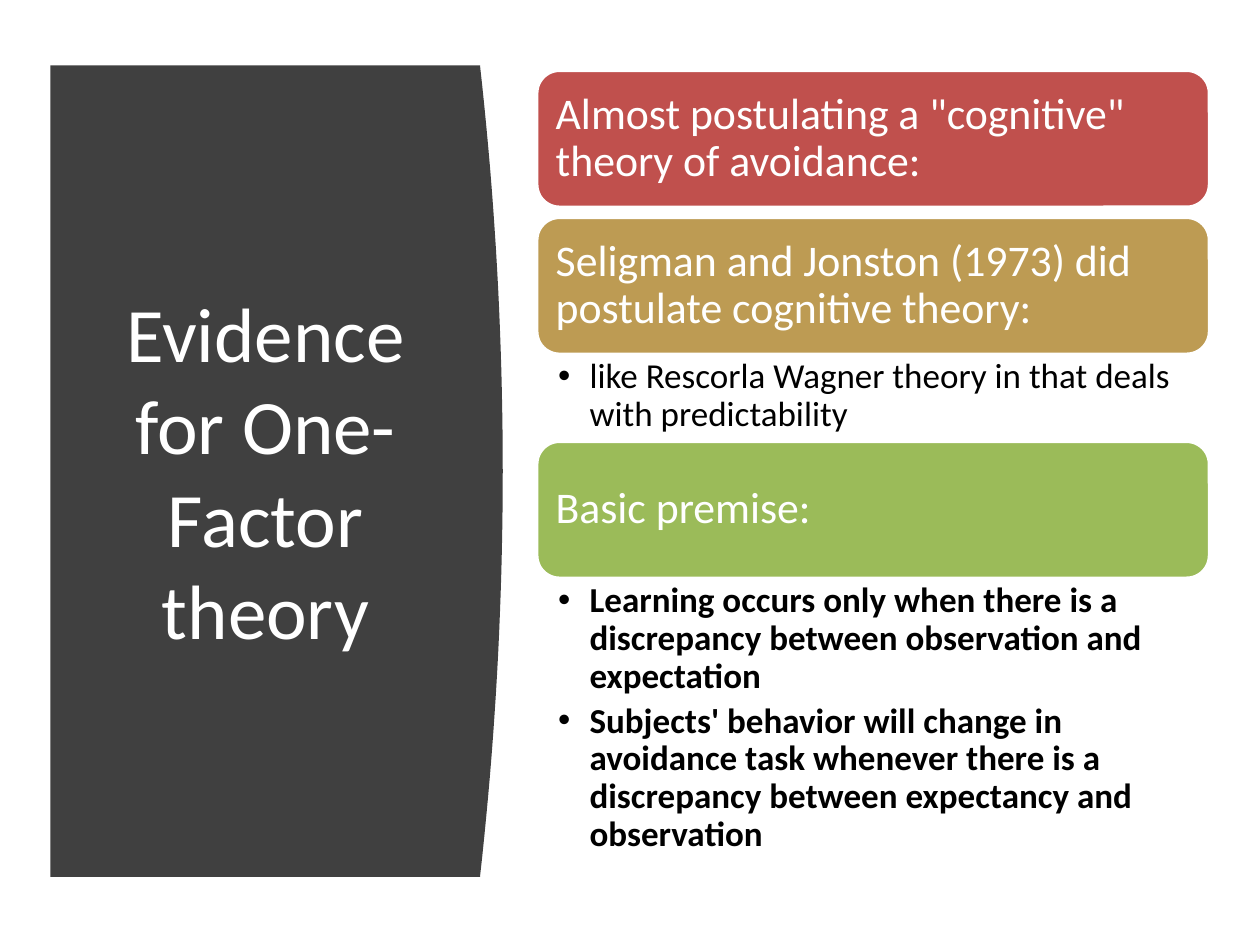
"""Builds the slide on evidence for one-factor theory."""
from pptx import Presentation
from pptx.dml.color import RGBColor
from pptx.enum.shapes import MSO_SHAPE
from pptx.enum.text import MSO_ANCHOR, MSO_AUTO_SIZE, PP_ALIGN
from pptx.util import Pt

WHITE = RGBColor(255, 255, 255)
BLACK = RGBColor(0, 0, 0)
DARK = RGBColor(0x40, 0x40, 0x40)
RED = RGBColor(0xC0, 0x50, 0x4D)
GOLD = RGBColor(0xBD, 0x9B, 0x53)
GREEN = RGBColor(0x9B, 0xBB, 0x59)


def write(frame, *lines, size, color=WHITE, bold=False, align=PP_ALIGN.LEFT,
          anchor=MSO_ANCHOR.MIDDLE, pads=(7.2, 7.2, 7.2, 7.2),
          pitch=0.9, after=0, hang=0):
    frame.word_wrap = True
    frame.auto_size = MSO_AUTO_SIZE.NONE
    frame.vertical_anchor = anchor
    (frame.margin_left, frame.margin_top,
     frame.margin_right, frame.margin_bottom) = map(Pt, pads)
    for i, line in enumerate(lines):
        par = frame.add_paragraph() if i else frame.paragraphs[0]
        par.alignment = align
        par.line_spacing = pitch
        par.space_before = Pt(0)
        par.space_after = Pt(after)
        if hang:
            props = par._p.get_or_add_pPr()
            props.set("marL", str(Pt(hang)))
            props.set("indent", str(Pt(-hang)))
        run = par.add_run()
        run.text = line
        font = run.font
        font.name, font.size, font.bold = "Calibri", Pt(size), bold
        font.color.rgb = color


class Deck:
    left, width, high = 306.7, 384.5, 78.3

    def __init__(self):
        self.pres = Presentation()
        self.pres.slide_width, self.pres.slide_height = Pt(720), Pt(540)
        self.slide = self.pres.slides.add_slide(self.pres.slide_layouts[3])
        self.shapes = self.slide.shapes

    def place(self, shape, *box):
        shape.left, shape.top, shape.width, shape.height = map(Pt, box)

    def paint(self, shape, fill):
        shape.shadow.inherit = False
        shape.fill.solid()
        shape.fill.fore_color.rgb = fill

    def panel(self, left, top, flat, bulge, high, fill, steps=40):
        edge = []
        for i in range(steps + 1):
            part = i / steps
            reach = flat + bulge * (1 - (2 * part - 1) ** 2)
            edge.append((Pt(left + reach), Pt(top + high * part)))
        form = self.shapes.build_freeform(Pt(left), Pt(top))
        form.add_line_segments(edge + [(Pt(left), Pt(top + high))])
        shape = form.convert_to_shape()
        self.paint(shape, fill)
        shape.line.fill.background()
        self.shapes._spTree.insert(2, shape._element)

    def title(self, text, *box):
        shape = self.shapes.title
        self.place(shape, *box)
        write(shape.text_frame, text, size=44, align=PP_ALIGN.CENTER, pitch=1)

    def card(self, text, top, fill):
        shape = self.shapes.add_shape(
            MSO_SHAPE.ROUNDED_RECTANGLE,
            Pt(self.left), Pt(top), Pt(self.width), Pt(self.high))
        self.paint(shape, fill)
        shape.line.color.rgb = WHITE
        shape.line.width = Pt(2)
        write(shape.text_frame, text, size=25)

    def points(self, slot, top, high, *lines, bold=False):
        shape = self.slide.placeholders[slot]
        self.place(shape, self.left, top, self.width, high)
        write(shape.text_frame, *lines, size=20, color=BLACK, bold=bold,
              anchor=MSO_ANCHOR.TOP, pads=(12.2, 2.3, 13.7, 2.3),
              after=4, hang=18)


def main():
    deck = Deck()
    deck.panel(28.8, 37.4, 245.5, 13, 463.7, DARK)
    deck.title("Evidence for One-Factor theory", 51, 80, 201.6, 377.3)
    deck.card('Almost postulating a "cognitive" theory of avoidance:', 40.2, RED)
    deck.card("Seligman and Jonston (1973) did postulate cognitive theory:",
              124.2, GOLD)
    deck.points(1, 202.5, 49.7,
                "like Rescorla Wagner theory in that deals with predictability")
    deck.card("Basic premise:", 252.2, GREEN)
    deck.points(2, 330.5, 167,
                "Learning occurs only when there is a discrepancy between "
                "observation and expectation",
                "Subjects' behavior will change in avoidance task whenever "
                "there is a discrepancy between expectancy and observation",
                bold=True)
    deck.pres.save("out.pptx")


if __name__ == "__main__":
    main()
